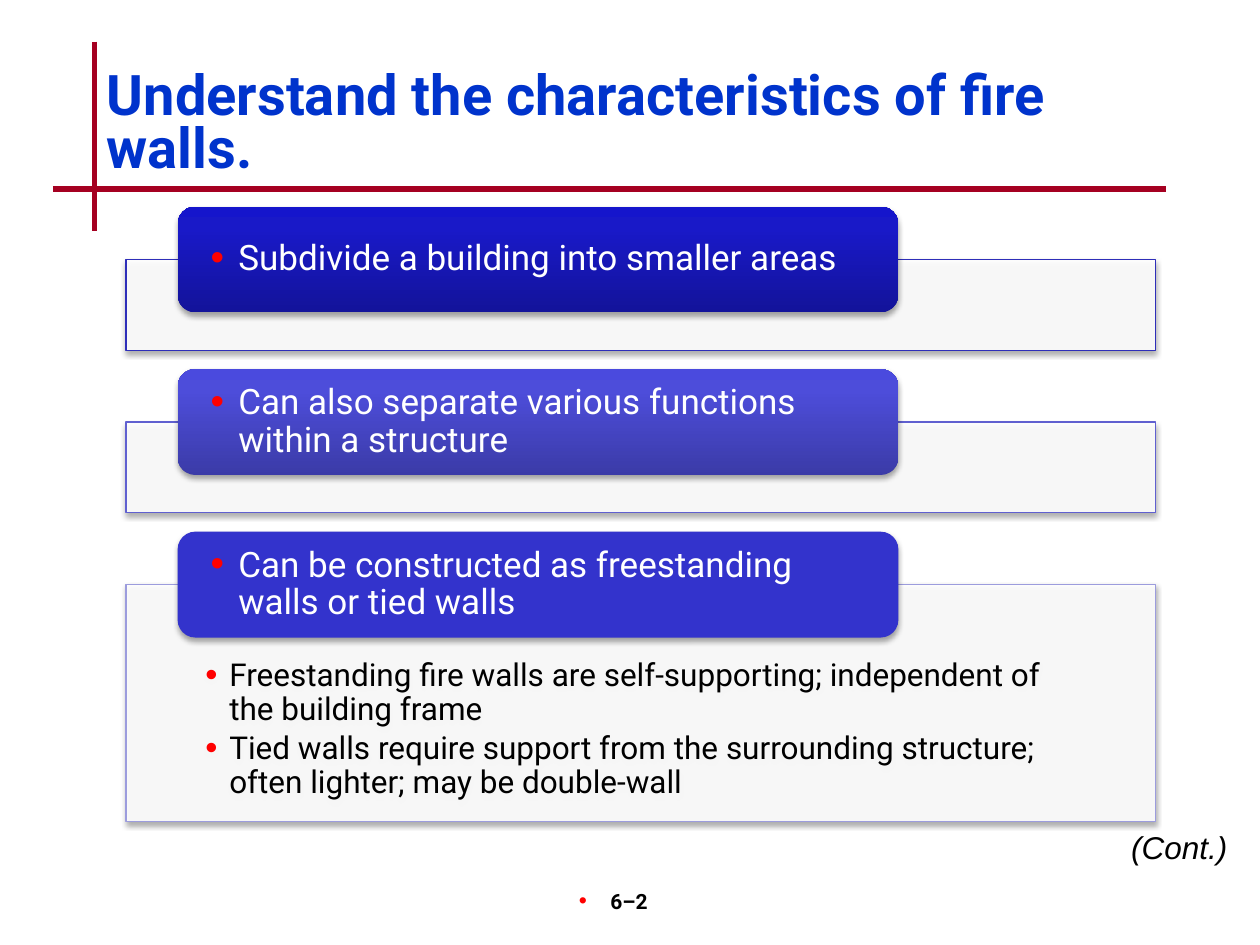
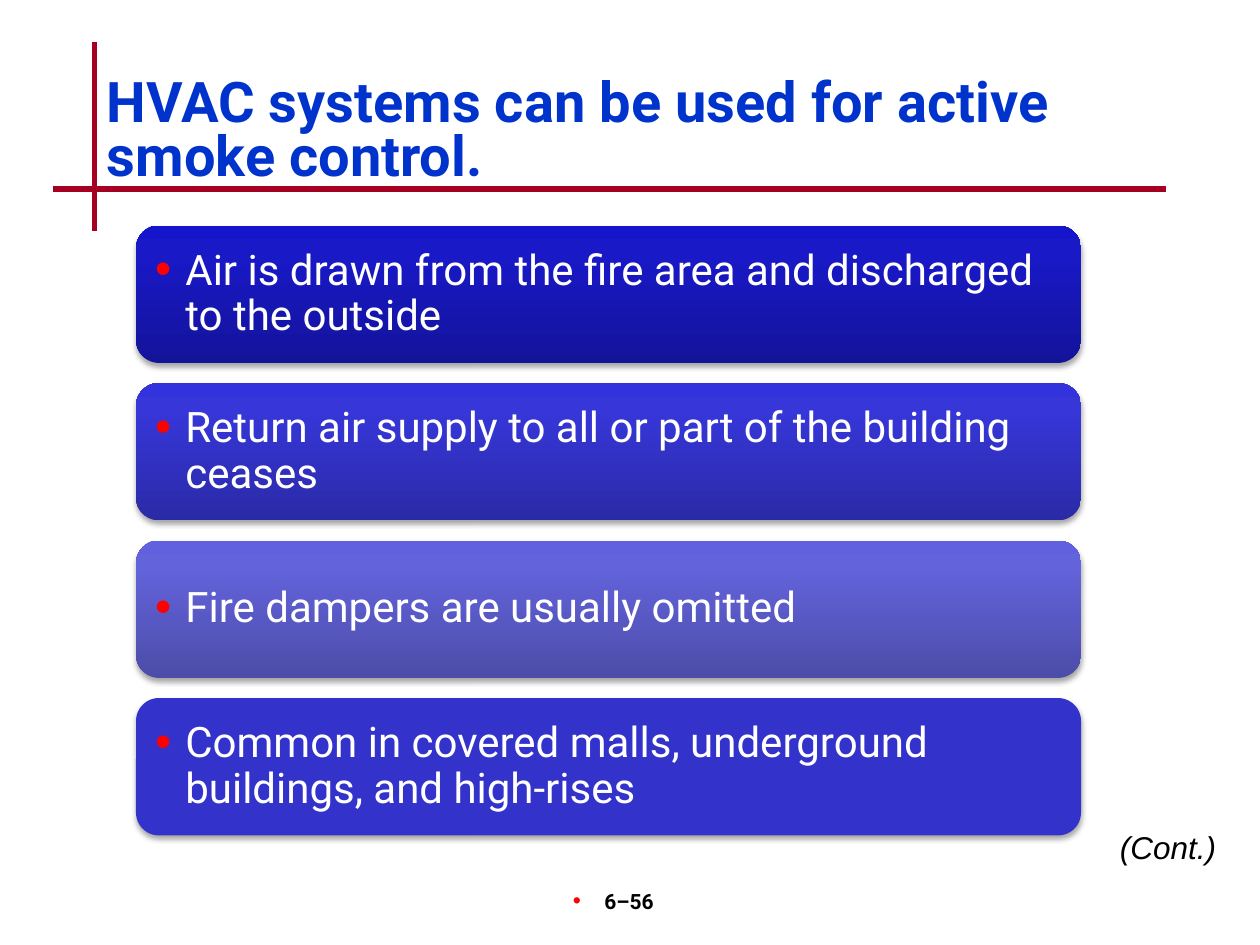
from dataclasses import dataclass
from typing import NamedTuple

from lxml.etree import SubElement
from pptx import Presentation
from pptx.dml.color import RGBColor
from pptx.enum.shapes import MSO_CONNECTOR as Connector, MSO_SHAPE as Preset
from pptx.enum.text import MSO_ANCHOR as Anchor, PP_ALIGN as Align
from pptx.oxml.ns import qn
from pptx.util import Pt

PX = 9144
COLORS = {
    "paper": "FFFFFF",
    "ink": "000000",
    "title": "0033CC",
    "rule": "A50021",
    "bullet": "FF0000",
    "block": "3333CC",
}
DEEP = ("13139A", "1919C8", "1515CC")
BRIGHT = ("2A2AA7", "3636D9", "3333DD")
MEDIUM = ("3B3BA8", "4D4DDA", "4A4ADE")
PALE = ("4C4CA9", "6363DB", "6161DF")
FLAT = (COLORS["block"],)
STOPS = (0, 80, 100)


class Box(NamedTuple):
    left: int
    top: int
    width: int
    height: int

    def emu(self) -> list[int]:
        return [side * PX for side in self]


class Insets(NamedTuple):
    left: int = 10
    top: int = 5
    right: int = 10
    bottom: int = 5


class Bullet(NamedTuple):
    margin: int
    hang: int


@dataclass(frozen=True)
class TextStyle:
    size: int
    color: str
    font: str = "Roboto"
    bold: bool = False
    italic: bool = False
    align: Align = Align.LEFT
    anchor: Anchor = Anchor.TOP
    spacing: float = 1.0
    after: int = 0
    insets: Insets = Insets()
    bullet: Bullet | None = None


@dataclass(frozen=True)
class Topic:
    text: str
    shades: tuple[str, ...]
    outline: str = ""
    details: tuple[str, ...] = ()


TITLE = TextStyle(32, COLORS["title"], bold=True, anchor=Anchor.MIDDLE, spacing=0.8)
PAGE = TextStyle(12, COLORS["ink"], bold=True, align=Align.CENTER, bullet=Bullet(6, 25))
CONTINUED = TextStyle(18, COLORS["ink"], font="Arial", italic=True, align=Align.RIGHT)
TAB = TextStyle(20, COLORS["paper"], anchor=Anchor.MIDDLE, spacing=0.9,
                insets=Insets(22, 0, 22, 0), bullet=Bullet(22, 22))
CARD = TextStyle(24, COLORS["paper"], anchor=Anchor.MIDDLE, spacing=0.9,
                 insets=Insets(10, 10, 10, 10), bullet=Bullet(24, 24))
DETAIL = TextStyle(18, COLORS["ink"], spacing=0.9, after=3,
                   insets=Insets(63, 59, 63, 14), bullet=Bullet(19, 19))

FIRE_WALLS = (
    Topic("Subdivide a building into smaller areas", DEEP, "2E2EB9"),
    Topic("Can also separate various functions within a structure", MEDIUM, "6060D0"),
    Topic("Can be constructed as freestanding walls or tied walls", FLAT, "9C9CDD", (
        "Freestanding fire walls are self-supporting; independent of the building frame",
        "Tied walls require support from the surrounding structure; often lighter; "
        "may be double-wall",
    )),
)
SMOKE_CONTROL = (
    Topic("Air is drawn from the fire area and discharged to the outside", DEEP),
    Topic("Return air supply to all or part of the building ceases", BRIGHT),
    Topic("Fire dampers are usually omitted", PALE),
    Topic("Common in covered malls, underground buildings, and high-rises", FLAT),
)


def rgb(color: str) -> RGBColor:
    return RGBColor.from_string(color)


def add_node(parent, tag: str, **attributes):
    return SubElement(parent, qn(tag), {key: str(value) for key, value in attributes.items()})


def add_bullet(paragraph, bullet: Bullet) -> None:
    properties = paragraph._p.get_or_add_pPr()
    properties.set("marL", str(bullet.margin * PX))
    properties.set("indent", str(-bullet.hang * PX))
    add_node(add_node(properties, "a:buClr"), "a:srgbClr", val=COLORS["bullet"])
    add_node(properties, "a:buSzPct", val=110000)
    add_node(properties, "a:buFont", typeface="Arial")
    add_node(properties, "a:buChar", char="•")


def write(shape, lines: tuple[str, ...], style: TextStyle) -> None:
    frame = shape.text_frame
    frame.word_wrap = True
    frame.vertical_anchor = style.anchor
    (frame.margin_left, frame.margin_top,
     frame.margin_right, frame.margin_bottom) = [side * PX for side in style.insets]
    frame.text = "\n".join(lines)
    for paragraph in frame.paragraphs:
        if style.bullet:
            add_bullet(paragraph, style.bullet)
        paragraph.alignment = style.align
        paragraph.line_spacing = style.spacing
        paragraph.space_after = Pt(style.after)
        for run in paragraph.runs:
            run.font.name = style.font
            run.font.size = Pt(style.size)
            run.font.bold = style.bold
            run.font.italic = style.italic
            run.font.color.rgb = rgb(style.color)


def add_label(slide, box: Box, text: str, style: TextStyle) -> None:
    write(slide.shapes.add_textbox(*box.emu()), (text,), style)


def add_rule(slide, x1: int, y1: int, x2: int, y2: int) -> None:
    rule = slide.shapes.add_connector(
        Connector.STRAIGHT, x1 * PX, y1 * PX, x2 * PX, y2 * PX)
    rule.line.color.rgb = rgb(COLORS["rule"])
    rule.line.width = Pt(3)
    add_node(rule._element.spPr, "a:effectLst")


def cast_shadow(shape) -> None:
    shape.shadow.inherit = False
    effects = shape._element.spPr.find(qn("a:effectLst"))
    shadow = add_node(effects, "a:outerShdw", blurRad=Pt(3.1), dist=Pt(1.8),
                      dir=5400000, rotWithShape=0)
    tone = add_node(shadow, "a:srgbClr", val=COLORS["ink"])
    add_node(tone, "a:alpha", val=35000)


def add_block(slide, box: Box, topic: Topic, style: TextStyle) -> None:
    block = slide.shapes.add_shape(Preset.ROUNDED_RECTANGLE, *box.emu())
    if len(topic.shades) == 1:
        block.fill.solid()
        block.fill.fore_color.rgb = rgb(topic.shades[0])
    else:
        block.fill.gradient()
        block.fill.gradient_angle = 90
        stops = block._element.spPr.find(qn("a:gradFill")).find(qn("a:gsLst"))
        stops.clear()
        for position, shade in zip(STOPS, topic.shades):
            stop = add_node(stops, "a:gs", pos=position * 1000)
            add_node(stop, "a:srgbClr", val=shade)
    block.line.fill.background()
    cast_shadow(block)
    write(block, (topic.text,), style)


def add_panel(slide, box: Box, topic: Topic) -> None:
    panel = slide.shapes.add_shape(Preset.RECTANGLE, *box.emu())
    panel.fill.solid()
    panel.fill.fore_color.rgb = rgb(COLORS["paper"])
    paper = panel._element.spPr.find(qn("a:solidFill"))[0]
    add_node(paper, "a:alpha", val=90000)
    panel.line.color.rgb = rgb(topic.outline)
    panel.line.width = Pt(0.75)
    cast_shadow(panel)
    if topic.details:
        write(panel, topic.details, DETAIL)


def start_slide(deck, title: str, title_top: int, page: str, continued_left: int):
    slide = deck.slides.add_slide(deck.slide_layouts[6])
    add_rule(slide, 75, 33, 75, 183)
    add_rule(slide, 42, 150, 925, 150)
    add_label(slide, Box(392, 700, 208, 50), page, PAGE)
    add_label(slide, Box(75, title_top, 850, 100), title, TITLE)
    add_label(slide, Box(continued_left, 652, 167, 40), "(Cont.)", CONTINUED)
    return slide


def add_fire_walls(deck) -> None:
    slide = start_slide(deck, "Understand the characteristics of fire walls.", 50, "6–2", 817)
    for row, topic in enumerate(FIRE_WALLS):
        top = 206 + row * 129
        add_panel(slide, Box(100, top, 817, 188 if topic.details else 72), topic)
        add_block(slide, Box(141, top - 42, 572, 84), topic, TAB)


def add_smoke_control(deck) -> None:
    slide = start_slide(
        deck, "HVAC systems can be used for active smoke control.", 56, "6–56", 808)
    for row, topic in enumerate(SMOKE_CONTROL):
        add_block(slide, Box(108, 179 + row * 125, 750, 109), topic, CARD)


def main() -> None:
    deck = Presentation()
    deck.slide_width = 1000 * PX
    deck.slide_height = 750 * PX
    add_fire_walls(deck)
    add_smoke_control(deck)
    deck.save("out.pptx")


if __name__ == "__main__":
    main()
